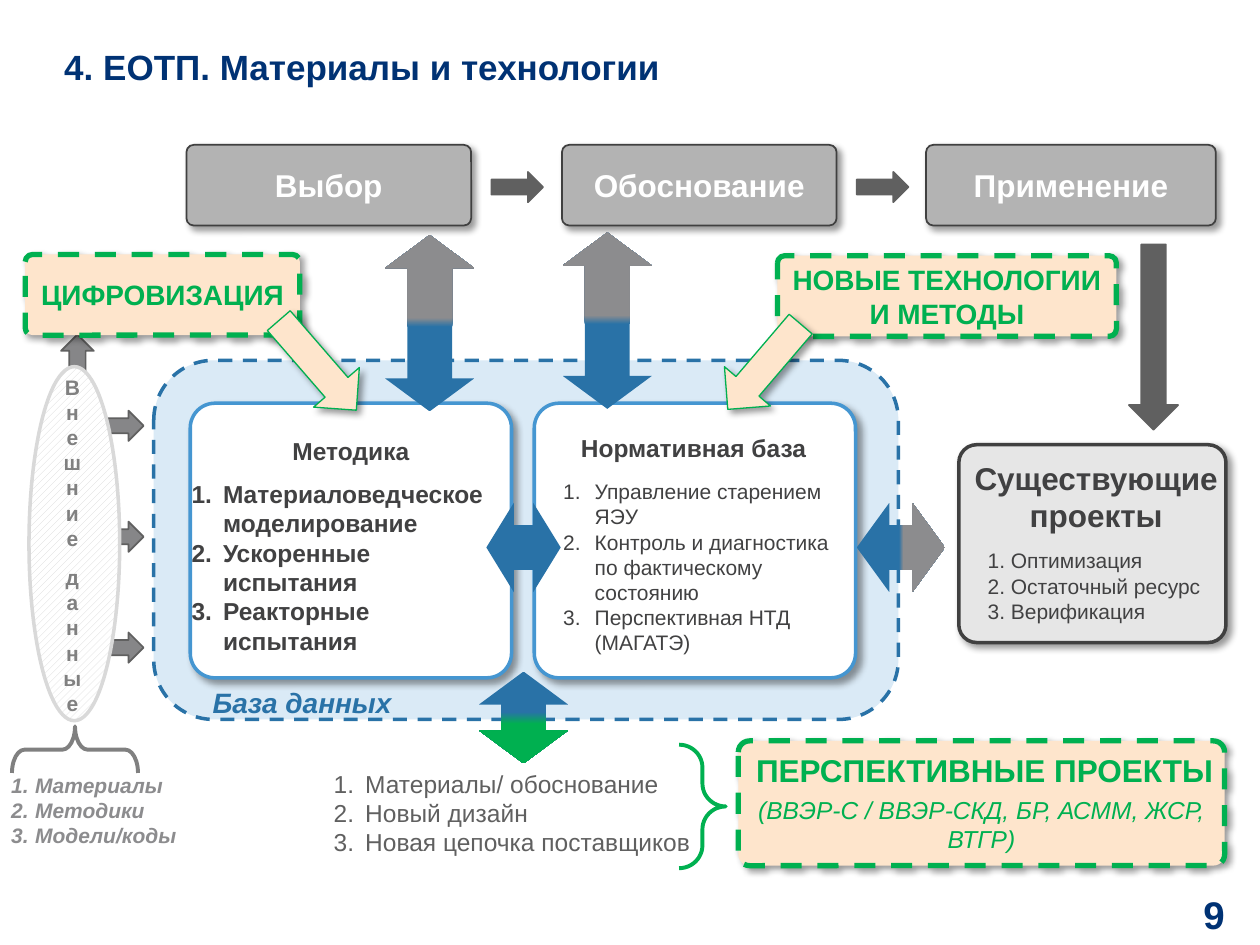
"""Build the slide on materials and technologies on a grid of 100 columns by 75 rows."""
from lxml import etree
from pptx import Presentation
from pptx.dml.color import RGBColor
from pptx.enum.dml import MSO_LINE, MSO_PATTERN
from pptx.enum.shapes import MSO_SHAPE
from pptx.enum.text import MSO_ANCHOR, MSO_AUTO_SIZE, PP_ALIGN
from pptx.oxml.ns import qn
from pptx.util import Inches, Pt

LEFT, CENTER, RIGHT = PP_ALIGN.LEFT, PP_ALIGN.CENTER, PP_ALIGN.RIGHT
TOP, MIDDLE = MSO_ANCHOR.TOP, MSO_ANCHOR.MIDDLE
BOX, OVAL, BRACE = MSO_SHAPE.ROUNDED_RECTANGLE, MSO_SHAPE.OVAL, MSO_SHAPE.LEFT_BRACE
ARROW, DOUBLE_ARROW = MSO_SHAPE.RIGHT_ARROW, MSO_SHAPE.LEFT_RIGHT_ARROW


class Theme:
    font = "Arial"
    navy, blue, card_blue, pale_blue = "003274", "2972A7", "4596D1", "DAEAF6"
    green, peach, white = "00B050", "FEE5CC", "FFFFFF"
    ink, border, dark, middle = "414142", "404040", "606060", "808080"
    arrow, ash, button, pale, hatch, rim = "868688", "8C8C8E", "B3B3B3", "E6E6E6", "D7D7D7", "D9D9D9"
    page, title, heading, label, body, small = 22, 20, 18, 16, 14, 12


presentation = Presentation()
presentation.slide_width, presentation.slide_height = Inches(10), Inches(7.5)
cell = presentation.slide_width / 100
slide = presentation.slides.add_slide(presentation.slide_layouts[4])
shapes = slide.shapes


def add_figure(kind, box, fill=None, line=None, width=1, rotation=0, adjust=(), dashed=False, shadow=False):
    """Add a preset shape placed in grid cells; a list as fill gives gradient stops."""
    shape = shapes.add_shape(kind, *(round(length * cell) for length in box))
    shape.rotation = rotation
    for index, value in enumerate(adjust):
        shape.adjustments[index] = value
    if isinstance(fill, list):
        shape.fill.gradient()
        shape.fill.gradient_angle = 0
        for stop, (position, color) in zip(shape.fill.gradient_stops, fill):
            stop.position = position
            stop.color.rgb = RGBColor.from_string(color)
    elif fill:
        shape.fill.solid()
        shape.fill.fore_color.rgb = RGBColor.from_string(fill)
    else:
        shape.fill.background()
    if line:
        shape.line.color.rgb = RGBColor.from_string(line)
        shape.line.width = Pt(width)
    else:
        shape.line.fill.background()
    if dashed:
        shape.line.dash_style = MSO_LINE.DASH
    shape.shadow.inherit = False
    if shadow:
        effects = shape.element.spPr.find(qn("a:effectLst"))
        outer = etree.SubElement(effects, qn("a:outerShdw"), blurRad=str(Pt(4)), dist=str(Pt(3)),
                                 dir="2700000", algn="tl", rotWithShape="0")
        color = etree.SubElement(outer, qn("a:srgbClr"), val="000000")
        etree.SubElement(color, qn("a:alpha"), val="40000")
    return shape


def write(target, lines, size, color, bold=False, italic=False, align=LEFT, anchor=TOP,
          indent=0, hanging=0, margins=(1, 0.5), wrap=True, gaps=()):
    """Write paragraphs into a shape or into a new text box; a hanging indent numbers them."""
    if isinstance(target, tuple):
        target = shapes.add_textbox(*(round(length * cell) for length in target))
    frame = target.text_frame
    frame.auto_size, frame.word_wrap, frame.vertical_anchor = MSO_AUTO_SIZE.NONE, wrap, anchor
    frame.margin_left = frame.margin_right = round(margins[0] * cell)
    frame.margin_top = frame.margin_bottom = round(margins[1] * cell)
    for index, text in enumerate(lines):
        paragraph = frame.paragraphs[0] if index == 0 else frame.add_paragraph()
        properties = paragraph._p.get_or_add_pPr()
        properties.set("marL", str(round(indent * cell)))
        properties.set("indent", str(round(-hanging * cell)))
        if hanging:
            etree.SubElement(properties, qn("a:buFont"), typeface=Theme.font)
            etree.SubElement(properties, qn("a:buAutoNum"), type="arabicPeriod")
        else:
            etree.SubElement(properties, qn("a:buNone"))
        paragraph.alignment = align
        paragraph.space_before = Pt(8 if index in gaps else 0)
        run = paragraph.add_run()
        run.text = text
        run.font.name, run.font.size = Theme.font, Pt(size)
        run.font.bold, run.font.italic = bold, italic
        run.font.color.rgb = RGBColor.from_string(color)


corner = (0.09,)
double = (0.5, 0.37)
blue_to_gray = [(0.48, Theme.blue), (0.53, Theme.ash)]
blue_to_green = [(0.44, Theme.blue), (0.57, Theme.green)]

add_figure(ARROW, (4.2, 27.2, 3.9, 2.6), Theme.arrow, Theme.dark, rotation=270)
for number in range(3):
    add_figure(ARROW, (7.3, 32.6 + 8.8 * number, 4.1, 2.4), Theme.arrow, Theme.dark)
add_figure(BOX, (12.2, 28.6, 59.1, 28.5), Theme.pale_blue, Theme.blue, 2, dashed=True)
for left in (15.1, 42.4):
    add_figure(BOX, (left, 32, 25.5, 21.8), Theme.white, Theme.card_blue, 2, adjust=corner, shadow=True)

for left, width, stage in ((14.8, 22.6, "Выбор"), (44.6, 21.8, "Обоснование"), (73.5, 23, "Применение")):
    button = add_figure(BOX, (left, 11.5, width, 6.4), Theme.button, Theme.border, adjust=corner, shadow=True)
    write(button, [stage], Theme.heading, Theme.white, bold=True, align=CENTER, anchor=MIDDLE)
for left in (39, 68):
    add_figure(ARROW, (left, 13.65, 4.1, 2.4), Theme.dark, Theme.dark)
add_figure(ARROW, (84.2, 24.8, 14.7, 3.9), Theme.dark, Theme.dark, rotation=90)

add_figure(BOX, (76.1, 35.3, 21.2, 15.7), Theme.pale, Theme.border, 2, adjust=corner, shadow=True)
write((76.3, 35.9, 21.4, 7.1), ["Существующие проекты"], Theme.heading, Theme.ink, bold=True, align=CENTER)
write((74.4, 43, 23.3, 7.1), ["1. Оптимизация", "2. Остаточный ресурс", "3. Верификация"],
      Theme.small, Theme.ink, indent=3)

for box, rotation, fill in (
    ((38.6, 39.9, 5.9, 7.1), 0, Theme.blue),
    ((41.2, 21.9, 14, 7.1), 270, blue_to_gray),
    ((27.1, 22.1, 14, 7.1), 270, blue_to_gray),
    ((68, 39.9, 7, 7.1), 0, blue_to_gray),
    ((37.9, 53.4, 7.3, 7.1), 90, blue_to_green),
):
    add_figure(DOUBLE_ARROW, box, fill, rotation=rotation, adjust=double)

ellipse = add_figure(OVAL, (2.3, 29.1, 7.2, 28.1), Theme.white, Theme.rim, 2)
ellipse.fill.patterned()
ellipse.fill.pattern = MSO_PATTERN.WIDE_UPWARD_DIAGONAL
ellipse.fill.fore_color.rgb = RGBColor.from_string(Theme.hatch)
ellipse.fill.back_color.rgb = RGBColor.from_string(Theme.white)
write((3.6, 29.2, 4.3, 29.3), "Внешниеданные", Theme.small, Theme.middle, bold=True, align=CENTER, gaps=(7,))

for box, lines in (
    ((2, 20.2, 21.8, 6.4), ["ЦИФРОВИЗАЦИЯ"]),
    ((61.7, 20.3, 26.9, 6.4), ["НОВЫЕ ТЕХНОЛОГИИ И МЕТОДЫ"]),
    ((58.6, 58.8, 38.6, 9.9), []),
):
    callout = add_figure(BOX, box, Theme.peach, Theme.green, 3, adjust=corner, dashed=True, shadow=True)
    write(callout, lines, Theme.label, Theme.green, bold=True, align=CENTER, anchor=MIDDLE)
for box, rotation in (((56.2, 26.7, 8.9, 4.8), 130.5), ((20.5, 26.6, 9.4, 4.8), 49.1)):
    add_figure(ARROW, box, Theme.peach, Theme.green, 0.75, rotation, shadow=True)
write((57.5, 59.1, 41.3, 4), ["ПЕРСПЕКТИВНЫЕ ПРОЕКТЫ"], Theme.heading, Theme.green, bold=True, align=CENTER)
write((56.3, 62.6, 40.7, 5.7), ["(ВВЭР-С / ВВЭР-СКД, БР, АСММ, ЖСР, ВТГР)"], Theme.body, Theme.green,
      italic=True, align=CENTER, indent=2.5)

add_figure(BRACE, (53.9, 59.1, 3.7, 9.8), None, Theme.green, 2.25, 180, (0.49, 0.5))
add_figure(BRACE, (4.1, 54.5, 3.7, 10), None, Theme.middle, 2.25, 90, (0.27, 0.5))
write((23, 60.5, 33.6, 8.1), ["Материалы/ обоснование", "Новый дизайн", "Новая цепочка поставщиков"],
      Theme.body, Theme.dark, indent=5, hanging=2.5)
write((-2.6, 60.8, 33.6, 7.1), ["Материалы", "Методики", "Модели/коды"], Theme.small, Theme.ash,
      bold=True, italic=True, indent=4.4, hanging=1.9)
write((15.9, 53.9, 16.4, 3.7), ["База данных"], Theme.label, Theme.blue, bold=True, italic=True, wrap=False)
write((90.3, 70.5, 6.9, 4.1), ["9"], Theme.page, Theme.navy, bold=True, align=RIGHT, anchor=MIDDLE, margins=(0, 0))

heading = dict(size=Theme.body, color=Theme.ink, bold=True, align=CENTER)
numbered = dict(color=Theme.ink, indent=2.5, hanging=2.5)
for index, box, lines, style in (
    (0, (5.1, 0, 83.5, 10.5), ["4. ЕОТП. Материалы и технологии"],
     dict(size=Theme.title, color=Theme.navy, bold=True, anchor=MIDDLE, margins=(0, 0))),
    (1, (15.1, 34.1, 25.5, 3.4), ["Методика"], heading),
    (2, (14.2, 37.5, 25.5, 15.1),
     ["Материаловедческое моделирование", "Ускоренные испытания", "Реакторные испытания"],
     dict(numbered, size=Theme.body, bold=True)),
    (3, (42.7, 33.9, 24.7, 3.4), ["Нормативная база"], heading),
    (4, (43.7, 37.5, 24.2, 15.1),
     ["Управление старением ЯЭУ", "Контроль и диагностика по фактическому состоянию",
      "Перспективная НТД (МАГАТЭ)"], dict(numbered, size=Theme.small)),
):
    placeholder = next(item for item in slide.placeholders if item.placeholder_format.idx == index)
    placeholder.left, placeholder.top, placeholder.width, placeholder.height = (
        round(length * cell) for length in box)
    write(placeholder, lines, **style)
    shapes.element.append(placeholder.element)

presentation.save("out.pptx")
